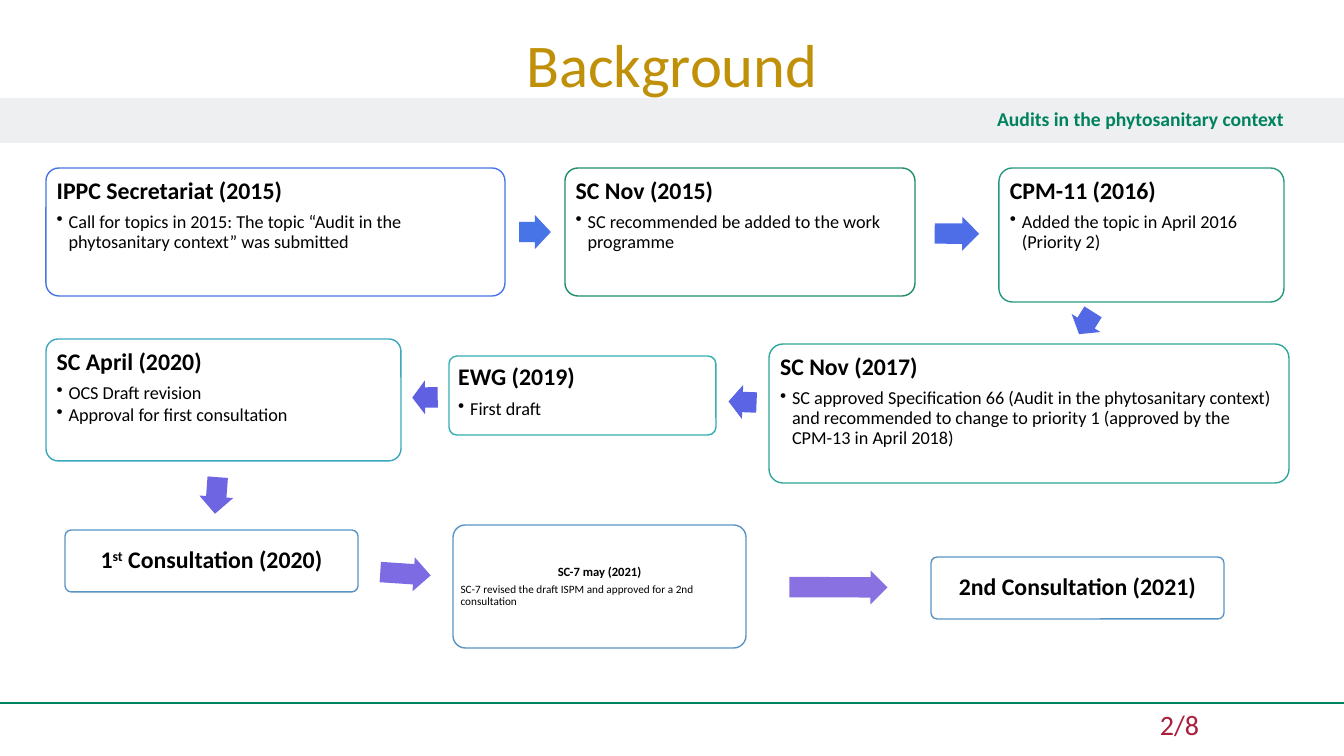
from dataclasses import dataclass
from itertools import pairwise
from math import atan2, degrees, hypot

from lxml import etree
from pptx import Presentation
from pptx.dml.color import RGBColor
from pptx.enum.shapes import MSO_CONNECTOR, MSO_SHAPE
from pptx.enum.text import MSO_ANCHOR, MSO_AUTO_SIZE, PP_ALIGN
from pptx.oxml.ns import qn
from pptx.util import Emu, Pt

LEFT, CENTER, RIGHT = PP_ALIGN.LEFT, PP_ALIGN.CENTER, PP_ALIGN.RIGHT
TOP, MIDDLE = MSO_ANCHOR.TOP, MSO_ANCHOR.MIDDLE
RECTANGLE, ROUNDED = MSO_SHAPE.RECTANGLE, MSO_SHAPE.ROUNDED_RECTANGLE
ARROW = MSO_SHAPE.RIGHT_ARROW
STRAIGHT = MSO_CONNECTOR.STRAIGHT


@dataclass(frozen=True)
class Theme:
    font: str = "Calibri"
    title: str = "C09008"
    green: str = "00825F"
    band: str = "D8D9DC"
    page: str = "A81E3B"
    text: str = "000000"
    title_size: float = 43.3
    page_size: int = 20
    band_size: int = 14
    heading_size: int = 17
    bullet_size: int = 13
    small_heading_size: int = 9
    small_text_size: int = 8


THEME = Theme()

# Content: text between ^ marks is superscript
TITLE = "Background"
BAND_TEXT = "Audits in the phytosanitary context"
PAGE_TEXT = "2/8"

# Steps: style, left, top, width, height in px, outline, heading, details
STEPS = [
    ("list", 46, 168, 459, 128, "4775E7", "IPPC Secretariat (2015)",
     ["Call for topics in 2015: The topic “Audit in the phytosanitary context” was submitted"]),
    ("list", 565, 168, 350, 128, "218D63", "SC Nov (2015)",
     ["SC recommended be added to the work programme"]),
    ("list", 999, 168, 285, 134, "279A7E", "CPM-11 (2016)",
     ["Added the topic in April 2016 (Priority 2)"]),
    ("list", 769, 344, 520, 139, "2DA79A", "SC Nov (2017)",
     ["SC approved Specification 66 (Audit in the phytosanitary context) and recommended "
      "to change to priority 1 (approved by the CPM-13 in April 2018)"]),
    ("list", 449, 356, 267, 79, "34AEB3", "EWG (2019)", ["First draft"]),
    ("list", 46, 339, 355, 122, "3BA7BE", "SC April (2020)",
     ["OCS Draft revision", "Approval for first consultation"]),
    ("label", 65, 530, 293, 62, "5A94C5", "1^st^ Consultation (2020)", []),
    ("small", 453, 525, 293, 123, "5A94C5", "SC-7 may (2021)",
     ["SC-7 revised the draft ISPM and approved for a 2nd consultation"]),
    ("label", 931, 557, 293, 62, "5A94C5", "2nd Consultation (2021)", []),
]
ARROW_COLORS = ["4775E7", "4D6EE6", "5368E5", "5A64E4", "6060E3", "6E65E2", "7C6BE2", "8971E1"]
ARROW_HEIGHT = 34
ARROW_SHARE = 0.53  # part of the gap between two boxes that an arrow fills


def px(value):
    return Emu(round(value * 914400 / 100.8))


def rgb(value):
    return RGBColor.from_string(value)


def set_frame(frame, anchor=TOP, margins=(7, 7, 7, 7)):
    frame.word_wrap = True
    frame.auto_size = MSO_AUTO_SIZE.NONE
    frame.vertical_anchor = anchor
    (frame.margin_left, frame.margin_top,
     frame.margin_right, frame.margin_bottom) = map(px, margins)


def write(paragraph, text, size, color=THEME.text, bold=False, align=LEFT,
          line_spacing=0.9, after=0.0, bullet=False):
    properties = paragraph._p.get_or_add_pPr()
    if bullet:
        properties.set("marL", str(px(12)))
        properties.set("indent", str(px(-12)))
        etree.SubElement(properties, qn("a:buChar")).set("char", "•")
    paragraph.alignment = align
    paragraph.line_spacing = line_spacing
    paragraph.space_before = Pt(0)
    paragraph.space_after = Pt(size * after)
    for index, part in enumerate(text.split("^")):
        run = paragraph.add_run()
        run.text = part
        run.font.name = THEME.font
        run.font.size = Pt(size)
        run.font.bold = bold
        run.font.color.rgb = rgb(color)
        if index % 2:
            run._r.get_or_add_rPr().set("baseline", "30000")


def add_shape(slide, kind, left, top, width, height, fill=None, line=None):
    shape = slide.shapes.add_shape(kind, px(left), px(top), px(width), px(height))
    shape.shadow.inherit = False
    if fill:
        shape.fill.solid()
        shape.fill.fore_color.rgb = rgb(fill)
    else:
        shape.fill.background()
    if line:
        shape.line.color.rgb = rgb(line)
        shape.line.width = Pt(1)
    else:
        shape.line.fill.background()
    return shape


def add_step(slide, style, left, top, width, height, color, heading, details):
    box = add_shape(slide, ROUNDED, left, top, width, height, line=color)
    box.adjustments[0] = 0.1
    frame = box.text_frame
    small, is_list = style == "small", style == "list"
    set_frame(frame, TOP if is_list else MIDDLE, (4 if small else 7,) * 4)
    write(frame.paragraphs[0], heading,
          THEME.small_heading_size if small else THEME.heading_size,
          bold=True, align=LEFT if is_list else CENTER, after=0.35)
    for detail in details:
        write(frame.add_paragraph(), detail,
              THEME.small_text_size if small else THEME.bullet_size,
              after=0.15 if is_list else 0.35, bullet=is_list)


def add_arrow(slide, start, end, color):
    """Point along the line between box centres, in the middle of the gap."""
    (x1, y1, w1, h1), (x2, y2, w2, h2) = [
        (left + width / 2, top + height / 2, width / 2, height / 2)
        for left, top, width, height in (start, end)]
    dx, dy = x2 - x1, y2 - y1

    def edge_share(half_width, half_height):
        return min(half / abs(delta)
                   for half, delta in ((half_width, dx), (half_height, dy)) if delta)

    leave, arrive = edge_share(w1, h1), 1 - edge_share(w2, h2)
    length = ARROW_SHARE * (arrive - leave) * hypot(dx, dy)
    middle = (leave + arrive) / 2
    arrow = add_shape(slide, ARROW, x1 + dx * middle - length / 2,
                      y1 + dy * middle - ARROW_HEIGHT / 2, length, ARROW_HEIGHT, fill=color)
    arrow.adjustments[0], arrow.adjustments[1] = 0.6, 0.5
    arrow.rotation = round(degrees(atan2(dy, dx)), 1) % 360


def main():
    presentation = Presentation()
    presentation.slide_width, presentation.slide_height = px(1344), px(756)
    slide = presentation.slides.add_slide(presentation.slide_layouts[5])

    # Header band and footer
    rule = slide.shapes.add_connector(STRAIGHT, px(0), px(703), px(1344), px(703))
    rule.line.color.rgb = rgb(THEME.green)
    rule.line.width = Pt(1)
    etree.SubElement(rule._element.spPr, qn("a:effectLst"))

    band = add_shape(slide, RECTANGLE, 0, 98, 1344, 45, fill=THEME.band)
    band_color = band._element.spPr.find(qn("a:solidFill"))[0]
    etree.SubElement(band_color, qn("a:alpha")).set("val", "42000")
    set_frame(band.text_frame, MIDDLE, (60, 5, 60, 5))
    write(band.text_frame.paragraphs[0], BAND_TEXT, THEME.band_size,
          color=THEME.green, bold=True, align=RIGHT)

    page = slide.shapes.add_textbox(px(1101), px(707), px(243), px(39))
    set_frame(page.text_frame, TOP, (59, 0, 39, 5))
    write(page.text_frame.paragraphs[0], PAGE_TEXT, THEME.page_size,
          color=THEME.page, line_spacing=1.0)

    # Title
    title = slide.shapes.title
    title.left, title.top, title.width, title.height = px(0), px(0), px(1344), px(126)
    set_frame(title.text_frame, MIDDLE, (10, 5, 10, 5))
    write(title.text_frame.paragraphs[0], TITLE, THEME.title_size,
          color=THEME.title, align=CENTER, line_spacing=1.0)
    slide.shapes._spTree.append(title._element)

    # Process steps and the arrows between them
    for step in STEPS:
        add_step(slide, *step)
    for (start, end), color in zip(pairwise(STEPS), ARROW_COLORS):
        add_arrow(slide, start[1:5], end[1:5], color)

    presentation.save("out.pptx")


if __name__ == "__main__":
    main()
